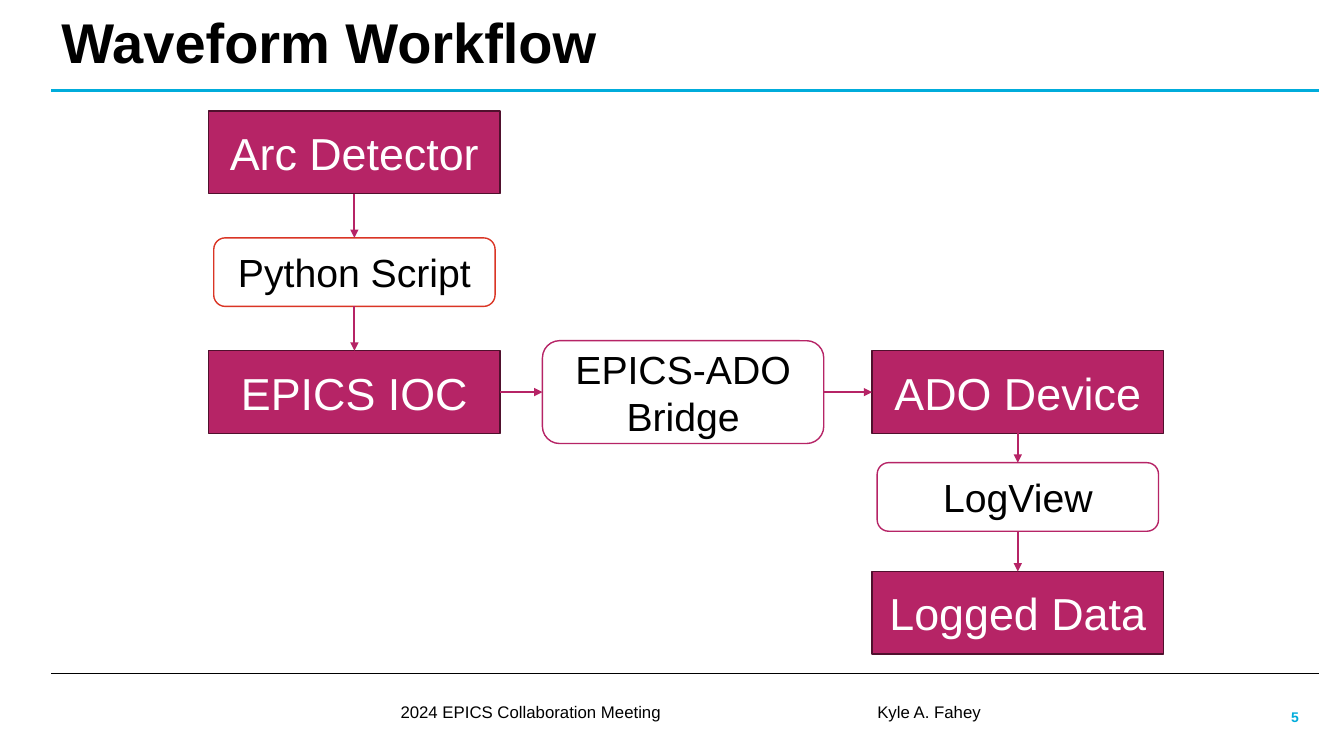
from dataclasses import dataclass

from lxml.etree import SubElement
from pptx import Presentation
from pptx.dml.color import RGBColor
from pptx.enum.shapes import MSO_CONNECTOR, MSO_SHAPE
from pptx.enum.text import MSO_ANCHOR, MSO_AUTO_SIZE, PP_ALIGN
from pptx.oxml.ns import qn
from pptx.shapes.autoshape import Shape
from pptx.shapes.connector import Connector
from pptx.slide import Slide
from pptx.text.text import TextFrame
from pptx.util import Inches, Pt

COLORS = {
    "magenta": "B62466",
    "plum": "50102D",
    "red": "DA3525",
    "cyan": "00ACDB",
    "black": "000000",
    "white": "FFFFFF",
}
FONT = "Arial"
TOP, LEFT, BOTTOM, RIGHT = range(4)
RULE_LEFT, RULE_RIGHT = 0.51, 13.08
DETECTOR_X, BRIDGE_X, DEVICE_X = 3.515, 6.775, 10.095
BRIDGE_Y = 3.89


@dataclass(frozen=True)
class NodeStyle:
    preset: MSO_SHAPE
    width: float
    fill: str
    text_color: str
    text_size: int


SYSTEM = NodeStyle(MSO_SHAPE.RECTANGLE, 2.89, "magenta", "white", 32)
PROCESS = NodeStyle(MSO_SHAPE.ROUNDED_RECTANGLE, 2.79, "white", "black", 28)


@dataclass(frozen=True)
class Node:
    text: str
    style: NodeStyle
    center_x: float
    center_y: float
    height: float
    outline: str


@dataclass(frozen=True)
class Label:
    text: str
    left: float
    width: float
    size: int
    color: str
    bold: bool
    anchor: MSO_ANCHOR
    inset: float


@dataclass(frozen=True)
class Rule:
    y: float
    color: str
    width: float


@dataclass(frozen=True)
class Arrow:
    source: str
    source_side: int
    target: str
    target_side: int


NODES = [
    Node("Arc Detector", SYSTEM, DETECTOR_X, 1.51, 0.82, "plum"),
    Node("EPICS IOC", SYSTEM, DETECTOR_X, BRIDGE_Y, 0.82, "plum"),
    Node("ADO Device", SYSTEM, DEVICE_X, BRIDGE_Y, 0.82, "plum"),
    Node("Logged Data", SYSTEM, DEVICE_X, 6.08, 0.82, "plum"),
    Node("Python Script", PROCESS, DETECTOR_X, 2.7, 0.68, "red"),
    Node("EPICS-ADO Bridge", PROCESS, BRIDGE_X, BRIDGE_Y, 1.02, "magenta"),
    Node("LogView", PROCESS, DEVICE_X, 4.93, 0.68, "magenta"),
]
ARROWS = [
    Arrow("Arc Detector", BOTTOM, "Python Script", TOP),
    Arrow("Python Script", BOTTOM, "EPICS IOC", TOP),
    Arrow("EPICS IOC", RIGHT, "EPICS-ADO Bridge", LEFT),
    Arrow("EPICS-ADO Bridge", RIGHT, "ADO Device", LEFT),
    Arrow("ADO Device", BOTTOM, "LogView", TOP),
    Arrow("LogView", BOTTOM, "Logged Data", TOP),
]
RULES = [Rule(0.9, "cyan", 2), Rule(6.68, "black", 0.5)]
LABELS = [
    Label("5", 12.61, 0.47, 10, "cyan", True, MSO_ANCHOR.MIDDLE, 0),
    Label("2024 EPICS Collaboration Meeting", 3.81, 2.91, 12, "black", False, MSO_ANCHOR.TOP, 0.05),
    Label("Kyle A. Fahey", 7.76, 2.91, 12, "black", False, MSO_ANCHOR.TOP, 0.05),
]


def rgb(name: str) -> RGBColor:
    return RGBColor.from_string(COLORS[name])


def write_text(frame: TextFrame, text: str, size: int, color: str, bold: bool = False,
               align: PP_ALIGN = PP_ALIGN.CENTER, anchor: MSO_ANCHOR = MSO_ANCHOR.MIDDLE) -> None:
    frame.word_wrap = True
    frame.auto_size = MSO_AUTO_SIZE.NONE
    frame.vertical_anchor = anchor
    paragraph = frame.paragraphs[0]
    paragraph.alignment = align
    run = paragraph.add_run()
    run.text = text
    run.font.name = FONT
    run.font.size = Pt(size)
    run.font.bold = bold
    run.font.color.rgb = rgb(color)


def add_title(slide: Slide, text: str) -> None:
    title = slide.shapes.title
    title.left, title.top = Inches(RULE_LEFT), Inches(0)
    title.width, title.height = Inches(RULE_RIGHT - RULE_LEFT), Inches(0.9)
    write_text(title.text_frame, text, 40, "black", bold=True, align=PP_ALIGN.LEFT)
    title.text_frame.paragraphs[0].line_spacing = 0.9


def add_label(slide: Slide, label: Label) -> None:
    box = slide.shapes.add_textbox(Inches(label.left), Inches(6.91), Inches(label.width), Inches(0.4))
    frame = box.text_frame
    frame.margin_left = frame.margin_right = Inches(label.inset)
    frame.margin_top = frame.margin_bottom = Inches(label.inset)
    write_text(frame, label.text, label.size, label.color, label.bold, anchor=label.anchor)


def add_node(slide: Slide, node: Node) -> Shape:
    style = node.style
    shape = slide.shapes.add_shape(
        style.preset,
        Inches(node.center_x - style.width / 2), Inches(node.center_y - node.height / 2),
        Inches(style.width), Inches(node.height))
    shape.shadow.inherit = False
    shape.fill.solid()
    shape.fill.fore_color.rgb = rgb(style.fill)
    shape.line.color.rgb = rgb(node.outline)
    shape.line.width = Pt(1)
    write_text(shape.text_frame, node.text, style.text_size, style.text_color)
    return shape


def add_line(slide: Slide, left: float, right: float, y: float, color: str, width: float) -> Connector:
    line = slide.shapes.add_connector(
        MSO_CONNECTOR.STRAIGHT, Inches(left), Inches(y), Inches(right), Inches(y))
    line.line.color.rgb = rgb(color)
    line.line.width = Pt(width)
    SubElement(line.element.spPr, qn("a:effectLst"))
    return line


def add_arrow(slide: Slide, arrow: Arrow, shapes: dict[str, Shape]) -> None:
    line = add_line(slide, 0, 0, 0, "magenta", 1.5)
    line.begin_connect(shapes[arrow.source], arrow.source_side)
    line.end_connect(shapes[arrow.target], arrow.target_side)
    outline = line.element.spPr.find(qn("a:ln"))
    SubElement(outline, qn("a:tailEnd"), type="triangle")


def main() -> None:
    presentation = Presentation()
    presentation.slide_width = Inches(13.33)
    presentation.slide_height = Inches(7.5)
    slide = presentation.slides.add_slide(presentation.slide_layouts.get_by_name("Title Only"))

    for rule in RULES:
        add_line(slide, RULE_LEFT, RULE_RIGHT, rule.y, rule.color, rule.width)
    add_title(slide, "Waveform Workflow")
    for label in LABELS:
        add_label(slide, label)
    shapes = {node.text: add_node(slide, node) for node in NODES}
    for arrow in ARROWS:
        add_arrow(slide, arrow, shapes)

    presentation.save("out.pptx")


if __name__ == "__main__":
    main()
